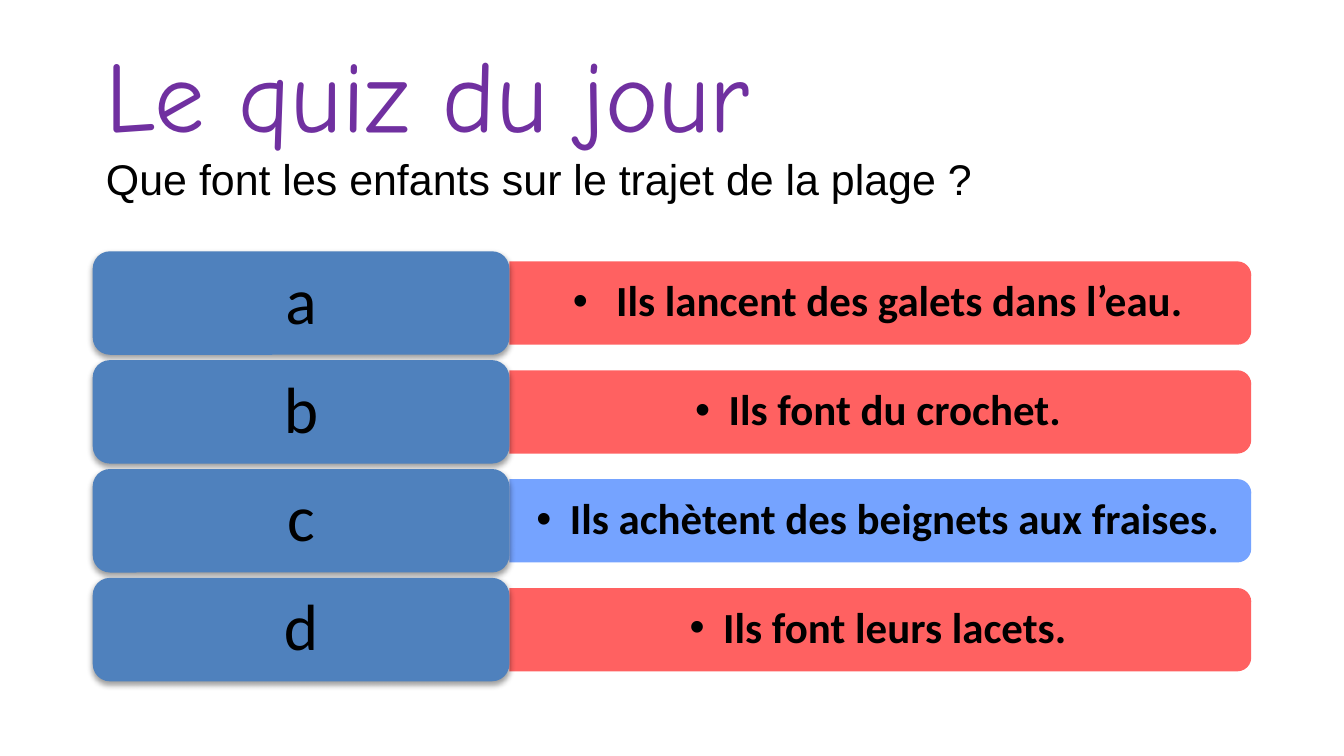
"""Build a quiz slide with four lettered answers."""
from lxml import etree
from pptx import Presentation
from pptx import util as u
from pptx.dml.color import RGBColor
from pptx.enum import shapes, text
from pptx.oxml import ns

COLORS = {"title": "7030A0", "text": "000000", "label": "4F81BD",
          "wrong": "FF5050", "right": "6699FF"}
FORMATS = {
    "title": {"name": "Comic Neue", "size": u.Pt(54)},
    "question": {"name": "Arial", "size": u.Pt(23)},
    "letter": {"name": "Calibri", "size": u.Pt(35)},
    "answer": {"name": "Calibri", "size": u.Pt(23), "bold": True},
}
ANSWERS = [
    ("a", " Ils lancent des galets dans l’eau.", "wrong"),
    ("b", "Ils font du crochet.", "wrong"),
    ("c", "Ils achètent des beignets aux fraises.", "right"),
    ("d", "Ils font leurs lacets.", "wrong"),
]
LEFT, TOP, PITCH = 0.69, 1.87, 0.81
LABEL_W, LABEL_H = 3.1, 0.77
BAR_W, BAR_H = 5.52, 0.62


def sub(parent, tag, **attrs):
    """Append a DrawingML child element."""
    return etree.SubElement(parent, ns.qn(f"a:{tag}"), attrs)


def add_run(p, words, style, color="text"):
    """Add a run in one of the named formats."""
    r = p.add_run()
    r.text = words
    for key, value in FORMATS[style].items():
        setattr(r.font, key, value)
    r.font.color.rgb = RGBColor.from_string(COLORS[color])


def add_text(s, left, top, width, height, inset_x=0.1, inset_y=0.05):
    """Add a wrapped, vertically centred text box and return its paragraph."""
    tf = s.shapes.add_textbox(*map(u.Inches, (left, top, width, height))).text_frame
    frame = {"word_wrap": True, "vertical_anchor": text.MSO_ANCHOR.MIDDLE,
             "margin_left": u.Inches(inset_x), "margin_right": u.Inches(inset_x),
             "margin_top": u.Inches(inset_y), "margin_bottom": u.Inches(inset_y)}
    for key, value in frame.items():
        setattr(tf, key, value)
    return tf.paragraphs[0]


def add_box(s, kind, left, top, width, height, color):
    """Add a filled shape without outline or shadow."""
    sp = s.shapes.add_shape(kind, *map(u.Inches, (left, top, width, height)))
    sp.fill.solid()
    sp.fill.fore_color.rgb = RGBColor.from_string(COLORS[color])
    sp.line.fill.background()
    sp.shadow.inherit = False
    return sp


def add_heading(s):
    """Add the title with the question on its second line."""
    p = add_text(s, LEFT, 0.2, 8.62, 1.35)
    add_run(p, "Le quiz du jour", "title", "title")
    p.add_line_break()
    add_run(p, "Que font les enfants sur le trajet de la plage ?", "question")


def add_answer(s, middle, words, color):
    """Add a translucent bar rounded on its right side, with bulleted text."""
    left = LEFT + LABEL_W
    sp = add_box(s, shapes.MSO_SHAPE.ROUND_2_SAME_RECTANGLE,
                 left + (BAR_W - BAR_H) / 2, middle - BAR_W / 2, BAR_H, BAR_W, color)
    sp.rotation = 90
    srgb = sp._element.spPr.find(f"{ns.qn('a:solidFill')}/{ns.qn('a:srgbClr')}")
    sub(srgb, "alpha", val="90000")
    p = add_text(s, left, middle - 0.28, 5.49, 0.56)
    p.alignment, p.line_spacing, p.level = text.PP_ALIGN.CENTER, 0.9, 1
    pPr = p._p.get_or_add_pPr()
    pPr.set("marL", str(u.Inches(0.25)))
    pPr.set("indent", str(u.Inches(-0.25)))
    sub(pPr, "buFont", typeface="Arial")
    sub(pPr, "buChar", char="•")
    add_run(p, words, "answer")


def add_label(s, top, letter):
    """Add a rounded label with a soft shadow and its letter."""
    sp = add_box(s, shapes.MSO_SHAPE.ROUNDED_RECTANGLE, LEFT, top, LABEL_W, LABEL_H, "label")
    shadow = sub(sp._element.spPr.find(ns.qn("a:effectLst")), "outerShdw",
                 blurRad=str(u.Pt(3.1)), dist=str(u.Pt(1.6)), dir="5400000", rotWithShape="0")
    sub(sub(shadow, "srgbClr", val=COLORS["text"]), "alpha", val="38000")
    p = add_text(s, LEFT + 0.04, top + 0.04, LABEL_W - 0.08, LABEL_H - 0.08, 0.15, 0.07)
    p.alignment, p.line_spacing = text.PP_ALIGN.CENTER, 0.9
    add_run(p, letter, "letter")


def main():
    """Build and save the slide in 16:9 format."""
    prs = Presentation()
    prs.slide_width = u.Inches(10)
    prs.slide_height = u.Inches(10 * 9 / 16)
    s = prs.slides.add_slide(prs.slide_layouts[6])
    add_heading(s)
    for i, (letter, words, color) in enumerate(ANSWERS):
        top = TOP + i * PITCH
        add_answer(s, top + LABEL_H / 2, words, color)
        add_label(s, top, letter)
    prs.save("out.pptx")


if __name__ == "__main__":
    main()
